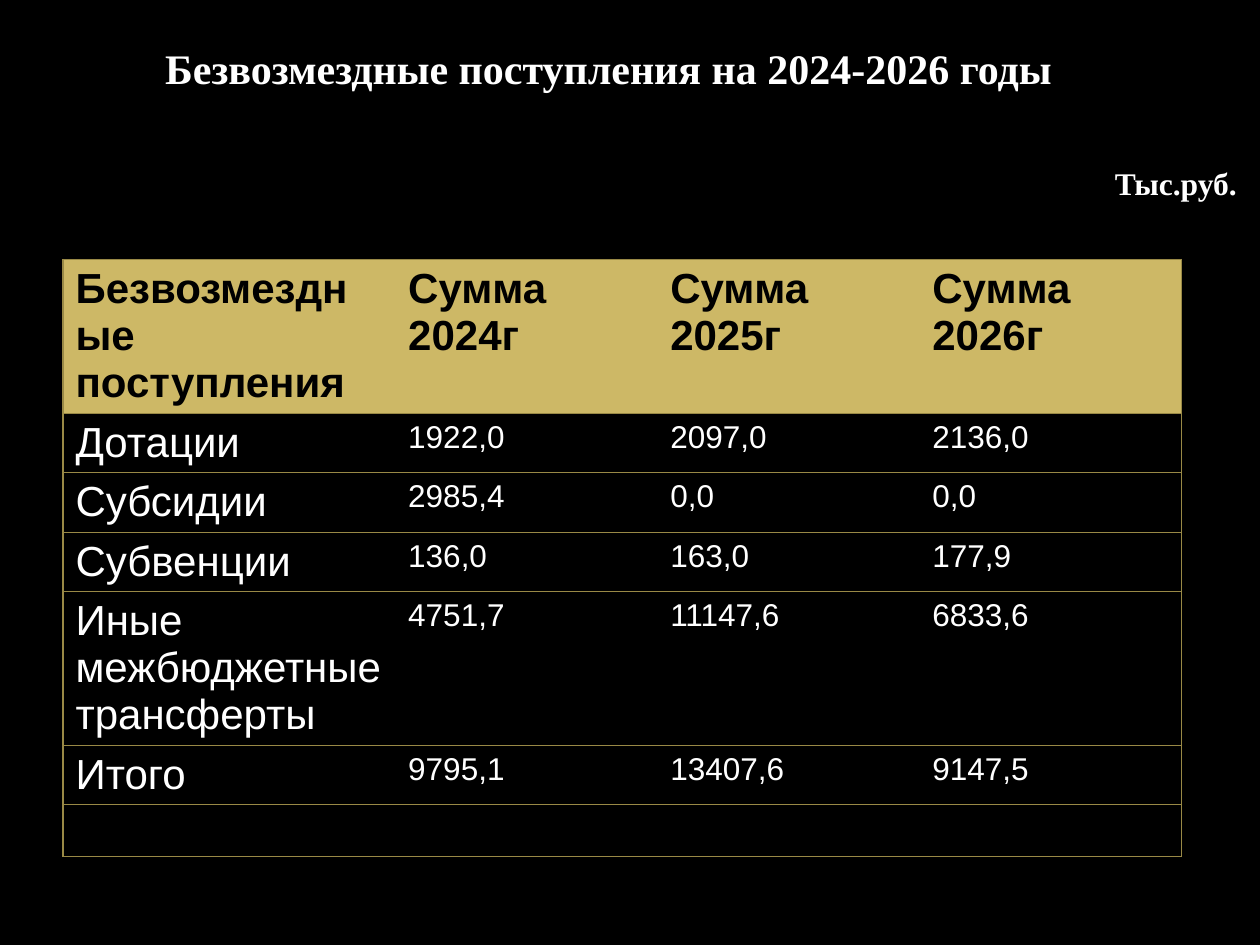
from dataclasses import dataclass

from lxml.etree import SubElement
from pptx import Presentation
from pptx.dml.color import RGBColor
from pptx.enum.text import MSO_ANCHOR, PP_ALIGN
from pptx.oxml.ns import qn
from pptx.slide import Slide
from pptx.table import _Cell as Cell
from pptx.text.text import TextFrame
from pptx.util import Inches, Pt


@dataclass(frozen=True)
class Theme:
    background: str = "000000"
    light: str = "FFFFFF"
    dark: str = "000000"
    header: str = "CDB866"
    border: str = "998946"
    heading_font: str = "Times New Roman"
    table_font: str = "Arial"
    large: int = 24
    small: int = 18
    border_width: float = 0.75


@dataclass(frozen=True)
class Box:
    left: float
    top: float
    width: float
    height: float

    def lengths(self) -> list[int]:
        return [Inches(value) for value in (self.left, self.top, self.width, self.height)]


@dataclass(frozen=True)
class TableRow:
    values: tuple[str, ...]
    height: float


THEME = Theme()
SLIDE_WIDTH, SLIDE_HEIGHT = 10, 7.5
TITLE_BOX = Box(0, 0, 9.66, 1.08)
UNIT_BOX = Box(8.75, 1.25, 1.48, 0.4)
COLUMN_WIDTHS = (2.64, 2.08, 2.08, 2.08)
TALL, NORMAL, SHORT = 1.22, 0.47, 0.41
ROWS = (
    TableRow(
        ("Безвозмездные поступления", "Сумма\n2024г", "Сумма\n2025г", "Сумма\n2026г"), TALL
    ),
    TableRow(("Дотации", "1922,0", "2097,0", "2136,0"), NORMAL),
    TableRow(("Субсидии", "2985,4", "0,0", "0,0"), NORMAL),
    TableRow(("Субвенции", "136,0", "163,0", "177,9"), NORMAL),
    TableRow(("Иные межбюджетные\nтрансферты", "4751,7", "11147,6", "6833,6"), TALL),
    TableRow(("Итого", "9795,1", "13407,6", "9147,5"), NORMAL),
    TableRow(("", "", "", ""), SHORT),
)
TABLE_BOX = Box(0.5, 2.06, sum(COLUMN_WIDTHS), sum(row.height for row in ROWS))


def write_text(
    frame: TextFrame, text: str, font_name: str, size: int, color: str, bold: bool
) -> None:
    frame.text = text
    for paragraph in frame.paragraphs:
        paragraph.font.name = font_name
        paragraph.font.size = Pt(size)
        paragraph.font.bold = bold
        paragraph.font.color.rgb = RGBColor.from_string(color)


def set_borders(cell: Cell, visible_sides: str) -> None:
    properties = cell._tc.get_or_add_tcPr()
    for position, side in enumerate("LRTB"):
        line = SubElement(properties, qn(f"a:ln{side}"), w=str(Pt(THEME.border_width)))
        if side in visible_sides:
            fill = SubElement(line, qn("a:solidFill"))
            SubElement(fill, qn("a:srgbClr"), val=THEME.border)
        else:
            SubElement(line, qn("a:noFill"))
        properties.insert(position, line)


def add_title(slide: Slide, text: str) -> None:
    title = slide.shapes.title
    title.left, title.top, title.width, title.height = TITLE_BOX.lengths()
    frame = title.text_frame
    write_text(frame, text, THEME.heading_font, THEME.large, THEME.light, True)
    frame.vertical_anchor = MSO_ANCHOR.MIDDLE
    frame.paragraphs[0].alignment = PP_ALIGN.CENTER


def add_unit_label(slide: Slide, text: str) -> None:
    frame = slide.shapes.add_textbox(*UNIT_BOX.lengths()).text_frame
    frame.word_wrap = True
    write_text(frame, text, THEME.heading_font, THEME.small, THEME.light, True)


def add_income_table(slide: Slide) -> None:
    table = slide.shapes.add_table(
        len(ROWS), len(COLUMN_WIDTHS), *TABLE_BOX.lengths()
    ).table
    table.horz_banding = False
    for column, width in zip(table.columns, COLUMN_WIDTHS):
        column.width = Inches(width)
    last_column = len(COLUMN_WIDTHS) - 1
    for row_index, row in enumerate(ROWS):
        table.rows[row_index].height = Inches(row.height)
        is_header = row_index == 0
        for column_index, value in enumerate(row.values):
            cell = table.cell(row_index, column_index)
            if is_header:
                cell.fill.solid()
                cell.fill.fore_color.rgb = RGBColor.from_string(THEME.header)
            else:
                cell.fill.background()
            is_large = is_header or (column_index == 0 and value)
            write_text(
                cell.text_frame,
                value,
                THEME.table_font,
                THEME.large if is_large else THEME.small,
                THEME.dark if is_header else THEME.light,
                is_header,
            )
            outer_side = {0: "L", last_column: "R"}.get(column_index, "")
            set_borders(cell, "TB" + outer_side)


def main() -> None:
    presentation = Presentation()
    presentation.slide_width = Inches(SLIDE_WIDTH)
    presentation.slide_height = Inches(SLIDE_HEIGHT)
    slide = presentation.slides.add_slide(presentation.slide_layouts.get_by_name("Title Only"))
    slide.background.fill.solid()
    slide.background.fill.fore_color.rgb = RGBColor.from_string(THEME.background)
    add_title(slide, "Безвозмездные поступления на 2024-2026 годы")
    add_income_table(slide)
    add_unit_label(slide, "Тыс.руб.")
    presentation.save("out.pptx")


if __name__ == "__main__":
    main()
